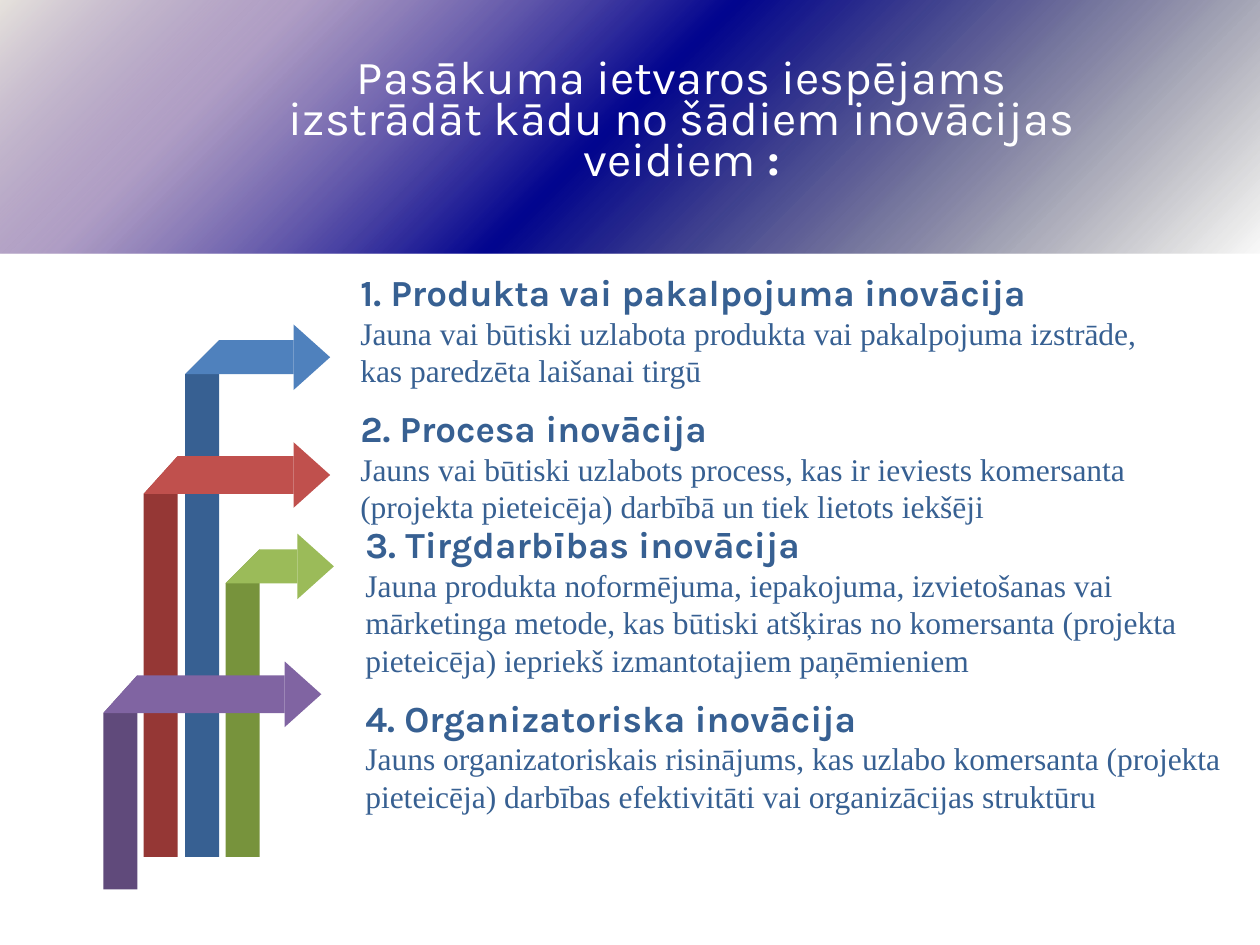
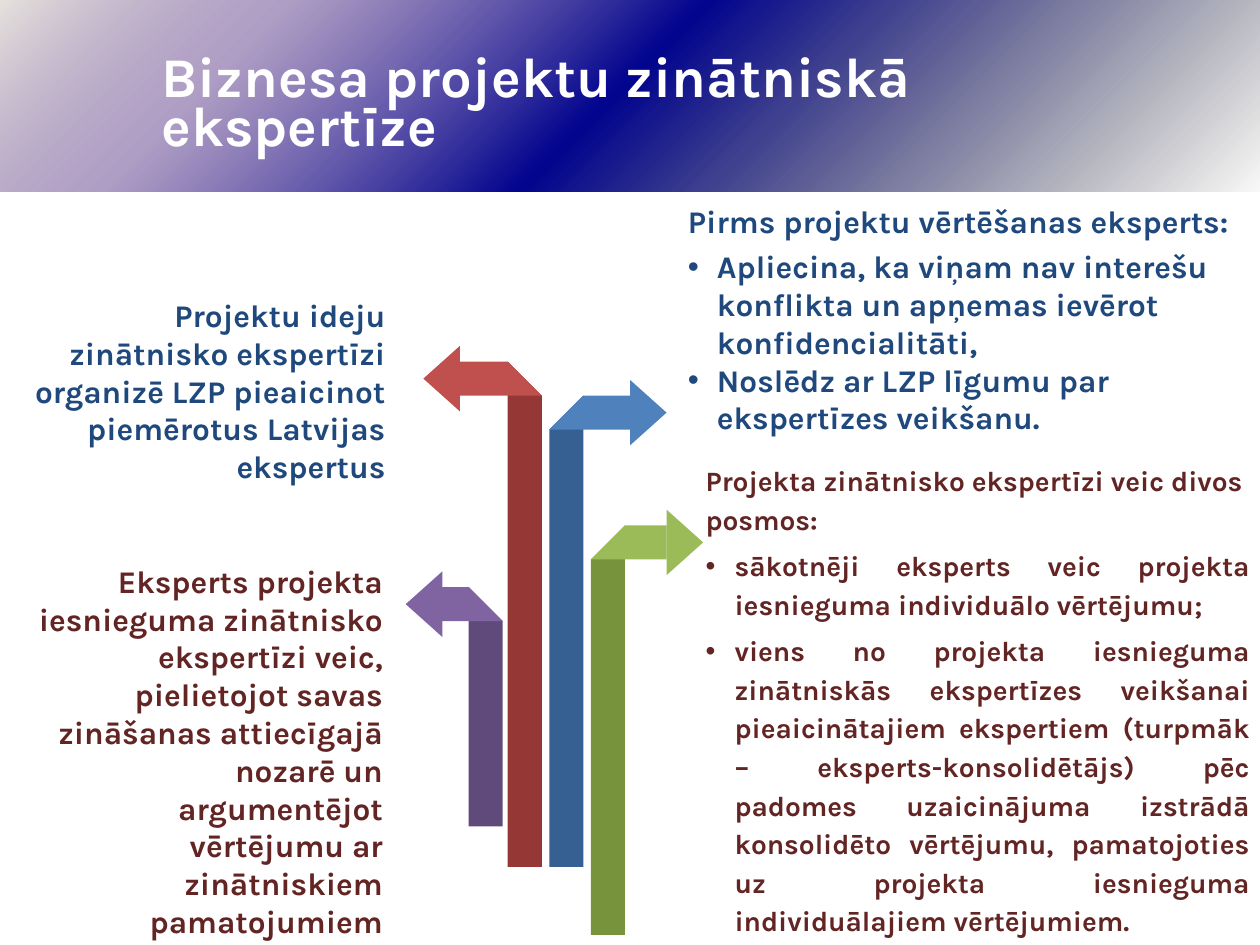
"""Build two slides on innovation types and the scientific review of business projects."""
from dataclasses import dataclass

import lxml.etree
import pptx
import pptx.dml.color
import pptx.enum.shapes
import pptx.enum.text
import pptx.oxml
import pptx.oxml.ns
import pptx.util

Inches = pptx.util.Inches
Pt = pptx.util.Pt
ALIGN = pptx.enum.text.PP_ALIGN
qn = pptx.oxml.ns.qn


@dataclass(frozen=True)
class Theme:
    """Colours, fonts and type sizes of the slides."""
    white: str = "FFFFFF"
    heading: str = "376092"
    navy: str = "1F497D"
    maroon: str = "632523"
    blue: tuple = ("376092", "4F81BD")
    green: tuple = ("77933C", "9BBB59")
    red: tuple = ("953735", "C0504D")
    purple: tuple = ("604A7B", "8064A2")
    band: tuple = ((0, "EEECE1", 100), (21, "8064A2", 62), (49, "02058F", 100), (100, "000000", 0))
    sans: str = "Karla"
    serif: str = "Times New Roman"
    title_size: int = 32
    long_title_size: int = 27
    heading_size: int = 21
    text_size: int = 18
    list_size: int = 16


THEME = Theme()


def add_text(paragraph, text, *, size, color, font=THEME.sans, bold=True, align=ALIGN.LEFT,
             line=1.0, after=0, bullet=None):
    """Add a formatted run to a paragraph and set the paragraph format; bullet is True, False or None."""
    run = paragraph.add_run()
    run.text = text
    run.font.size = Pt(size)
    run.font.name = font
    run.font.bold = bold
    run.font.color.rgb = pptx.dml.color.RGBColor.from_string(color)
    paragraph.alignment = align
    paragraph.line_spacing = line
    paragraph.space_before = Pt(0)
    paragraph.space_after = Pt(after)
    if bullet is not None:
        properties = paragraph._p.get_or_add_pPr()
        indent = Inches(0.23) if bullet else 0
        properties.set("marL", str(indent))
        properties.set("indent", str(-indent))
        mark = lxml.etree.SubElement(properties, qn("a:buChar" if bullet else "a:buNone"))
        if bullet:
            mark.set("char", "•")


class Deck:
    """Hold the presentation, its theme and the current slide."""

    def __init__(self, theme):
        """Start an empty 4:3 presentation."""
        self.theme = theme
        self.show = pptx.Presentation()
        self.show.slide_width = Inches(10)
        self.show.slide_height = Inches(7.5)
        self.slide = None

    def new_slide(self, layout, band_bottom):
        """Start a slide with the gradient band behind its title."""
        self.slide = self.show.slides.add_slide(self.show.slide_layouts[layout])
        top = -0.15
        band = self.slide.shapes.add_shape(
            pptx.enum.shapes.MSO_SHAPE.RECTANGLE,
            Inches(-0.03), Inches(top), Inches(10.13), Inches(band_bottom - top))
        band.shadow.inherit = False
        band.line.fill.background()
        band.fill.gradient()
        band.fill.gradient_angle = 315
        stops = band._element.spPr.find(qn("a:gradFill")).find(qn("a:gsLst"))
        for old in list(stops):
            stops.remove(old)
        for position, color, alpha in self.theme.band:
            stop = lxml.etree.SubElement(stops, qn("a:gs"), pos=str(position * 1000))
            tint = lxml.etree.SubElement(stop, qn("a:srgbClr"), val=color)
            lxml.etree.SubElement(tint, qn("a:alpha"), val=str(alpha * 1000))
        self.slide.shapes._spTree.insert(2, band._element)

    def place(self, holder, box, inset):
        """Move a text holder, set its margins and return its text frame."""
        holder.left, holder.top, holder.width, holder.height = (Inches(v) for v in box)
        frame = holder.text_frame
        frame.word_wrap = True
        frame.auto_size = pptx.enum.text.MSO_AUTO_SIZE.NONE
        frame.vertical_anchor = pptx.enum.text.MSO_ANCHOR.TOP
        frame.margin_left = frame.margin_right = frame.margin_top = Inches(inset)
        frame.margin_bottom = Inches(min(inset, 0.04))
        return frame

    def title(self, box, parts, size, align):
        """Fill the title placeholder with (text, bold) parts."""
        paragraph = self.place(self.slide.shapes.title, box, 0.04).paragraphs[0]
        for text, bold in parts:
            add_text(paragraph, text, size=size, color=self.theme.white, bold=bold,
                     align=align, line=0.72)

    def text_box(self, box, lines):
        """Add a text box from (text, format) lines."""
        self.fill(self.slide.shapes.add_textbox(0, 0, 0, 0), box, lines)

    def bullets(self, index, box, heading, items, heading_format, item_format):
        """Fill a body placeholder with a heading and a bulleted list."""
        lines = [(heading, dict(heading_format, bullet=False))]
        lines += [(item, dict(item_format, bullet=True)) for item in items]
        self.fill(self.slide.placeholders[index], box, lines)

    def fill(self, holder, box, lines):
        """Write one paragraph for each (text, format) line."""
        frame = self.place(holder, box, 0.05)
        for number, (text, style) in enumerate(lines):
            paragraph = frame.add_paragraph() if number else frame.paragraphs[0]
            add_text(paragraph, text, **style)

    def outline(self, points, color):
        """Draw a closed filled outline."""
        corners = [(Inches(x), Inches(y)) for x, y in points]
        builder = self.slide.shapes.build_freeform(*corners[0])
        builder.add_line_segments(corners[1:], close=True)
        shape = builder.convert_to_shape()
        shape.shadow.inherit = False
        shape.fill.solid()
        shape.fill.fore_color.rgb = pptx.dml.color.RGBColor.from_string(color)
        shape.line.fill.background()

    def ribbon(self, base, top, tip, bottom, colors, depth=0.27):
        """Draw a post folded at its top into an arrow that points at tip."""
        dark, light = colors
        side = 1 if tip > base else -1
        inner = base + side * 0.27
        neck = tip - side * 0.29
        fold = top + depth
        middle = top + depth / 2
        self.outline([(base, fold), (inner, top), (inner, bottom), (base, bottom)], dark)
        self.outline([(base, fold), (inner, top), (neck, top), (neck, fold)], light)
        self.outline([(neck, middle - 0.26), (tip, middle), (neck, middle + 0.26)], light)


def innovation_types(deck):
    """Build the slide on the four types of innovation."""
    theme = deck.theme
    deck.new_slide(5, 2.01)
    deck.title((2.04, 0.45, 6.74, 0.78),
               [("Pasākuma ietvaros iespējams izstrādāt kādu no šādiem inovācijas veidiem ", False),
                (":", True)], theme.long_title_size, ALIGN.CENTER)

    deck.ribbon(1.47, 2.7, 2.62, 6.8, theme.blue)
    deck.ribbon(1.79, 4.36, 2.65, 6.8, theme.green)
    deck.ribbon(1.14, 3.62, 2.62, 6.8, theme.red, depth=0.3)
    deck.ribbon(0.82, 5.36, 2.55, 7.06, theme.purple, depth=0.3)

    heading = dict(size=theme.heading_size, color=theme.heading)
    detail = dict(size=theme.text_size, color=theme.heading, font=theme.serif, bold=False)
    innovations = [
        ((2.81, 2.09, 6.44, 1.04), "1. Produkta vai pakalpojuma inovācija",
         "Jauna vai būtiski uzlabota produkta vai pakalpojuma izstrāde, kas paredzēta "
         "laišanai tirgū"),
        ((2.81, 3.17, 6.57, 1.04), "2. Procesa inovācija",
         "Jauns vai būtiski uzlabots process, kas ir ieviests komersanta (projekta "
         "pieteicēja) darbībā un tiek lietots iekšēji"),
        ((2.85, 4.09, 7.14, 1.34), "3. Tirgdarbības inovācija",
         "Jauna produkta noformējuma, iepakojuma, izvietošanas vai mārketinga metode, kas "
         "būtiski atšķiras no komersanta (projekta pieteicēja) iepriekš izmantotajiem "
         "paņēmieniem"),
        ((2.85, 5.47, 6.94, 1.04), "4. Organizatoriska inovācija",
         "Jauns organizatoriskais risinājums, kas uzlabo komersanta (projekta pieteicēja) "
         "darbības efektivitāti vai organizācijas struktūru"),
    ]
    for box, name, description in innovations:
        deck.text_box(box, [(name, heading), (description, detail)])


def scientific_review(deck):
    """Build the slide on the scientific review of projects."""
    theme = deck.theme
    deck.new_slide(3, 1.52)
    deck.title((1.24, 0.43, 7.35, 1.43), [("Biznesa projektu zinātniskā ekspertīze", True)],
               theme.title_size, ALIGN.LEFT)

    deck.ribbon(4.36, 3.14, 5.29, 6.88, theme.blue)
    deck.ribbon(4.69, 4.17, 5.58, 7.42, theme.green)
    deck.ribbon(4.3, 2.87, 3.36, 6.88, theme.red)
    deck.ribbon(3.99, 4.66, 3.22, 6.56, theme.purple)

    organiser = dict(size=theme.text_size, color=theme.navy)
    expert = dict(size=theme.text_size, color=theme.maroon)
    stage = dict(size=theme.list_size, color=theme.maroon, line=1.15, after=4.5)
    deck.text_box((0.2, 2.3, 2.91, 1.48), [
        ("Projektu ideju zinātnisko ekspertīzi organizē LZP pieaicinot piemērotus Latvijas "
         "ekspertus", dict(organiser, align=ALIGN.RIGHT))])
    deck.text_box((0.16, 4.41, 2.93, 2.2), [
        ("Eksperts projekta iesnieguma zinātnisko ekspertīzi veic, pielietojot savas "
         "zināšanas attiecīgajā nozarē un argumentējot vērtējumu ar zinātniskiem "
         "pamatojumiem", dict(expert, align=ALIGN.RIGHT))])
    deck.bullets(1, (5.41, 1.55, 4.42, 1.96), "Pirms projektu vērtēšanas eksperts:", [
        "Apliecina, ka viņam nav interešu konflikta un apņemas ievērot konfidencialitāti,",
        "Noslēdz ar LZP līgumu par ekspertīzes veikšanu.",
    ], dict(organiser, after=4.5), organiser)
    deck.bullets(2, (5.55, 3.59, 4.42, 3.6), "Projekta zinātnisko ekspertīzi veic divos posmos:", [
        "sākotnēji eksperts veic projekta iesnieguma individuālo vērtējumu;",
        "viens no projekta iesnieguma zinātniskās ekspertīzes veikšanai pieaicinātajiem "
        "ekspertiem (turpmāk – eksperts-konsolidētājs) pēc padomes uzaicinājuma izstrādā "
        "konsolidēto vērtējumu, pamatojoties uz projekta iesnieguma individuālajiem "
        "vērtējumiem.",
    ], stage, dict(stage, align=ALIGN.JUSTIFY))


def main():
    """Build and save the presentation."""
    deck = Deck(THEME)
    innovation_types(deck)
    scientific_review(deck)
    deck.show.save("out.pptx")


if __name__ == "__main__":
    main()
